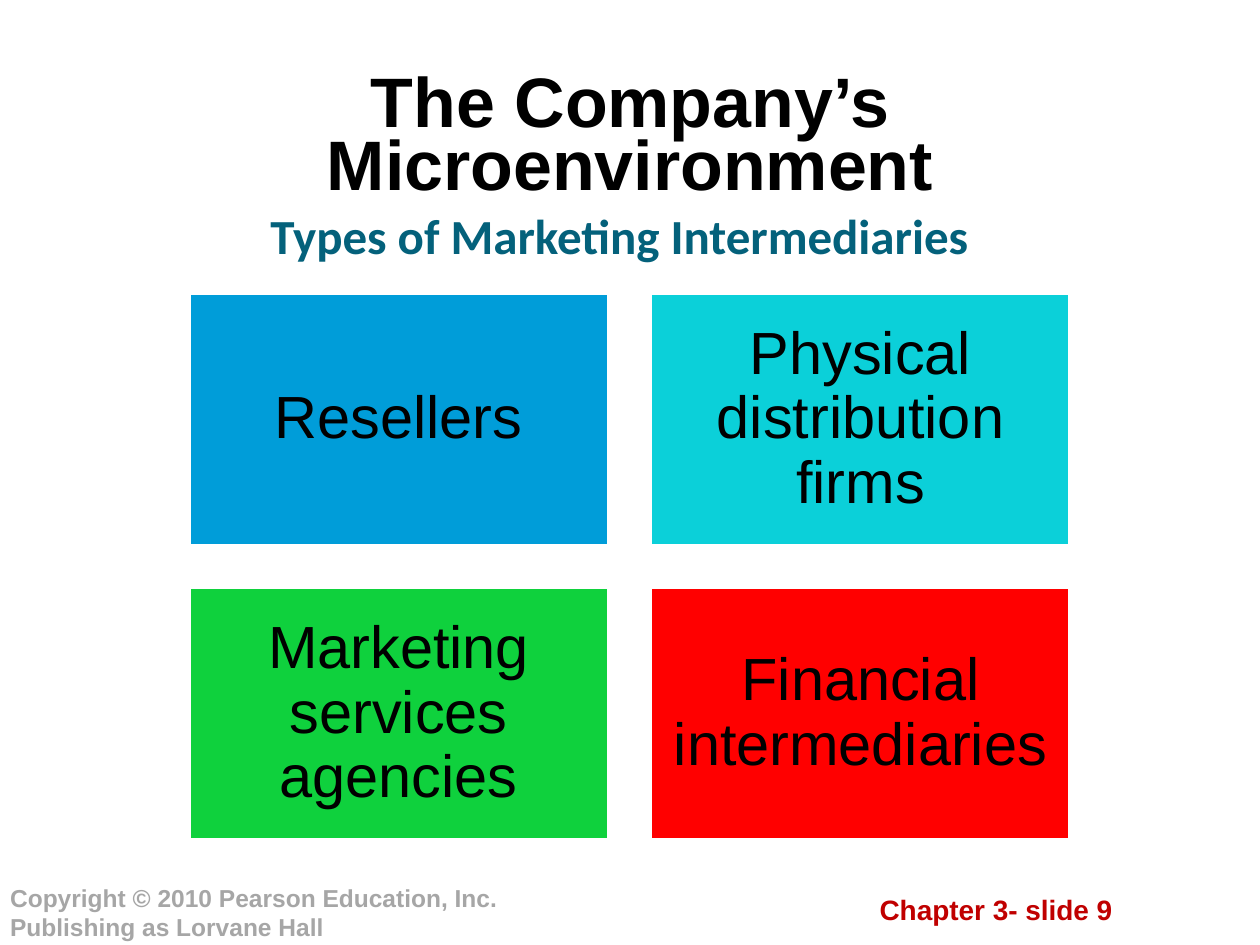
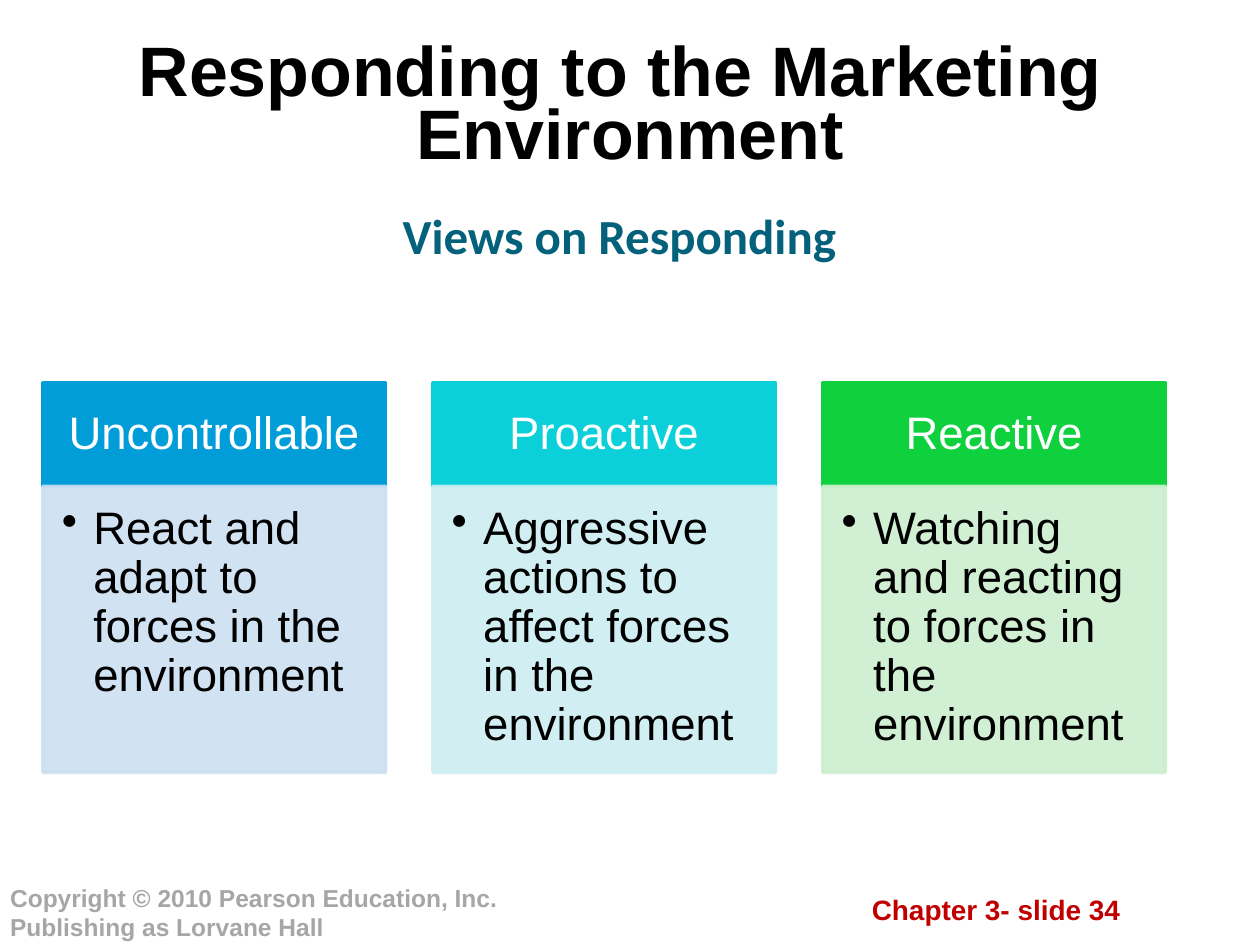
from lxml.etree import SubElement
from pptx import Presentation
from pptx.dml.color import RGBColor
from pptx.enum.shapes import MSO_SHAPE
from pptx.enum.text import MSO_ANCHOR, MSO_AUTO_SIZE, PP_ALIGN
from pptx.oxml.ns import qn
from pptx.util import Inches, Pt

# Content
COPYRIGHT = ["Copyright © 2010 Pearson Education, Inc.", "Publishing as Lorvane Hall"]
MICROENVIRONMENT = {
    "title": "The Company’s Microenvironment",
    "title_top": 0.5,
    "subtitle": "Types of Marketing Intermediaries",
    "number": 9,
}
INTERMEDIARIES = [
    ("Resellers", "blue"),
    ("Physical distribution firms", "cyan"),
    ("Marketing services agencies", "green"),
    ("Financial intermediaries", "red"),
]
RESPONDING = {
    "title": "Responding to the Marketing \vEnvironment",
    "title_top": 0.25,
    "subtitle": "Views on Responding",
    "number": 34,
}
VIEWS = [
    ("Uncontrollable", "React and adapt to forces in the environment", "blue"),
    ("Proactive", "Aggressive actions to affect forces in the environment", "cyan"),
    ("Reactive", "Watching and reacting to forces in the environment", "green"),
]

# Shared look
COLORS = {
    "black": "000000", "white": "FFFFFF", "teal": "04617B",
    "crimson": "C00000", "grey": "A6A6A6",
    "blue": "009DD9", "cyan": "0BD0D9", "green": "0FD13D", "red": "FF0000",
    "pale blue": "CCDFF1", "pale cyan": "CCEEF1", "pale green": "CCEECE",
}
TITLE = {"size": 40, "bold": True, "color": "black", "spacing": Pt(36)}
SUBTITLE = {"size": 28, "bold": True, "color": "teal", "name": "Calibri"}
CHAPTER = {"size": 16, "bold": True, "color": "crimson", "spacing": 1.02}
NOTICE = {"size": 14, "bold": True, "color": "grey", "spacing": 1.02,
          "align": PP_ALIGN.LEFT}
TILE = {"size": 34, "color": "black", "spacing": 0.9}
HEADING = {"size": 26, "color": "white", "spacing": 0.9}
DETAIL = {"size": 26, "color": "black", "spacing": 0.9, "align": PP_ALIGN.LEFT}

# Grids, in inches
TILE_GRID = {"left": 1.5, "top": 2.33, "width": 3.33, "height": 2, "gap": 0.335}
VIEW_GRID = {"left": 0.34, "top": 3.04, "width": 2.72, "gap": 0.375,
             "heading": 0.82, "detail": 2.27}


def color(name):
    return RGBColor.from_string(COLORS[name])


def place(shape, left, top, width, height):
    for side, value in zip(("left", "top", "width", "height"),
                           (left, top, width, height)):
        setattr(shape, side, Inches(value))


def write(shape, lines, look, margins=None, anchor=None):
    """Fill a shape with formatted paragraphs."""
    frame = shape.text_frame
    frame.word_wrap = True
    frame.auto_size = MSO_AUTO_SIZE.NONE
    if anchor is not None:
        frame.vertical_anchor = anchor
    if margins:
        for side, value in zip(("left", "top", "right", "bottom"), margins):
            setattr(frame, f"margin_{side}", Inches(value))
    for index, line in enumerate(lines):
        para = frame.add_paragraph() if index else frame.paragraphs[0]
        para.text = line
        formats = {"alignment": look.get("align", PP_ALIGN.CENTER),
                   "line_spacing": look.get("spacing", 1.0),
                   "space_before": Pt(0)}
        for name, value in formats.items():
            setattr(para, name, value)
        fonts = {"name": look.get("name", "Arial"), "size": Pt(look["size"]),
                 "bold": look.get("bold", False)}
        for span in para.runs:
            for name, value in fonts.items():
                setattr(span.font, name, value)
            span.font.color.rgb = color(look["color"])


def set_bullet(para, symbol=None, indent=0):
    properties = para._p.get_or_add_pPr()
    properties.set("marL", str(Inches(indent)))
    properties.set("indent", str(-Inches(indent)))
    if symbol:
        SubElement(properties, qn("a:buChar")).set("char", symbol)
    else:
        SubElement(properties, qn("a:buNone"))


def add_box(page, area, fill, line, opacity=100):
    box = page.shapes.add_shape(MSO_SHAPE.RECTANGLE, *map(Inches, area))
    box.shadow.inherit = False
    box.fill.solid()
    box.fill.fore_color.rgb = color(fill)
    box.line.color.rgb = color(line)
    box.line.width = Pt(2)
    if opacity < 100:
        for shade in box._element.spPr.iter(qn("a:srgbClr")):
            SubElement(shade, qn("a:alpha")).set("val", str(opacity * 1000))
    return box


def add_page(deck, content):
    """Start a slide with its title, subtitle and footers."""
    page = deck.slides.add_slide(deck.slide_layouts[1])
    title, body = page.placeholders[0], page.placeholders[1]
    place(title, 0.75, content["title_top"], 8.5, 1.25)
    write(title, [content["title"]], TITLE, anchor=MSO_ANCHOR.MIDDLE)
    place(body, 1, 1.58, 7.83, 0.42)
    write(body, [content["subtitle"]], SUBTITLE, anchor=MSO_ANCHOR.TOP)
    set_bullet(body.text_frame.paragraphs[0])

    footers = [
        ((6.83, 7.08, 2.15, 0.22), [f"Chapter 3- slide {content['number']}"], CHAPTER),
        ((0.08, 7, 4.92, 0.5), COPYRIGHT, NOTICE),
    ]
    for area, lines, look in footers:
        footer = page.shapes.add_textbox(*map(Inches, area))
        write(footer, lines, look, margins=(0, 0, 0, 0))
    return page


def add_tiles(page):
    grid = TILE_GRID
    for index, (label, fill) in enumerate(INTERMEDIARIES):
        row, column = divmod(index, 2)
        left = grid["left"] + column * (grid["width"] + grid["gap"])
        top = grid["top"] + row * (grid["height"] + grid["gap"])
        tile = add_box(page, (left, top, grid["width"], grid["height"]), fill, "white")
        write(tile, [label], TILE, (0.14,) * 4, MSO_ANCHOR.MIDDLE)


def add_views(page):
    grid = VIEW_GRID
    for column, (name, description, fill) in enumerate(VIEWS):
        left = grid["left"] + column * (grid["width"] + grid["gap"])
        heading = add_box(page, (left, grid["top"], grid["width"], grid["heading"]),
                          fill, fill)
        write(heading, [name], HEADING, (0.2, 0.12, 0.2, 0.12), MSO_ANCHOR.MIDDLE)

        pale = f"pale {fill}"
        detail = add_box(page, (left, grid["top"] + grid["heading"],
                                grid["width"], grid["detail"]), pale, pale, opacity=90)
        write(detail, [description], DETAIL, (0.15, 0.15, 0.2, 0.23), MSO_ANCHOR.TOP)
        set_bullet(detail.text_frame.paragraphs[0], "•", 0.25)


def main():
    deck = Presentation()
    deck.slide_width, deck.slide_height = Inches(10), Inches(7.5)
    add_tiles(add_page(deck, MICROENVIRONMENT))
    add_views(add_page(deck, RESPONDING))
    deck.save("out.pptx")


if __name__ == "__main__":
    main()
